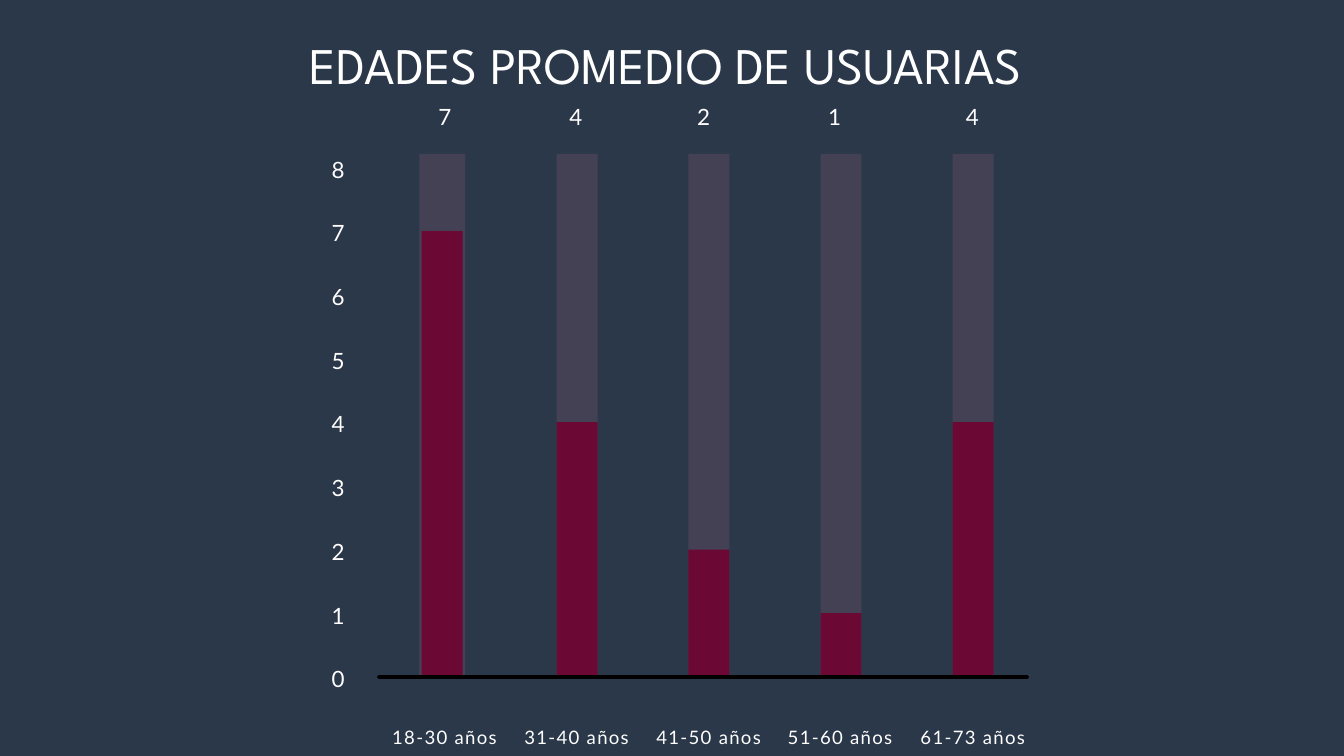
from pptx import Presentation
from pptx.dml.color import RGBColor
from pptx.enum.shapes import MSO_SHAPE
from pptx.enum.text import PP_ALIGN
from pptx.oxml.ns import qn
from pptx.util import Pt
from lxml import etree

RECTANGLE = MSO_SHAPE.RECTANGLE
CENTER = PP_ALIGN.CENTER

COLORS = {
    "background": "2B3849",
    "title": "FFFFFF",
    "label": "FFFEFE",
    "track": "9C617B",
    "bar": "6B0834",
    "axis": "191919",
    "axis_line": "000000",
}

# Age group, users, centre of the bar, centre of the count, width of the track
AGE_GROUPS = [
    ("18-30 años", 7, 473.8, 476.6, 49),
    ("31-40 años", 4, 618.4, 617, 43.9),
    ("41-50 años", 2, 759.6, 753.8, 43.9),
    ("51-60 años ", 1, 901.1, 894.2, 43.9),
    ("61-73 años", 4, 1042.6, 1041.8, 43.9),
]
MAX_VALUE = 8
UNIT = 68.25
ZERO_Y = 725.3
TRACK_TOP = 164.9
BAR_BOTTOM = 726.5
BAR_WIDTH = 43.9
GROUP_PITCH = 141.5


def color(name):
    return RGBColor.from_string(COLORS[name])


def add_text(slide, text, center_x, top, width, height, size, line_spacing,
             font="Lato", color_name="label", tracking=0):
    """Add a centred line of text; tracking is in points."""
    box = slide.shapes.add_textbox(
        Pt(center_x - width / 2), Pt(top), Pt(width), Pt(height))
    frame = box.text_frame
    frame.word_wrap = True
    frame.margin_left = frame.margin_right = 0
    frame.margin_top = frame.margin_bottom = 0
    paragraph = frame.paragraphs[0]
    paragraph.text = text
    paragraph.alignment = CENTER
    paragraph.line_spacing = Pt(line_spacing)
    paragraph.font.name = font
    paragraph.font.size = Pt(size)
    paragraph.font.color.rgb = color(color_name)
    if tracking:
        properties = paragraph._p.pPr.find(qn("a:defRPr"))
        properties.set("spc", str(round(tracking * 100)))


def add_number(slide, value, center_x, top):
    add_text(slide, str(value), center_x, top, 46.1, 33.8, 24, 36.8,
             tracking=0.2)


def add_rectangle(slide, left, top, width, height, color_name, opacity=100):
    shape = slide.shapes.add_shape(
        RECTANGLE, Pt(left), Pt(top), Pt(width), Pt(height))
    shape.shadow.inherit = False
    shape.fill.solid()
    shape.fill.fore_color.rgb = color(color_name)
    shape.line.fill.background()
    if opacity < 100:
        fill_color = shape._element.spPr.find(qn("a:solidFill"))[0]
        etree.SubElement(fill_color, qn("a:alpha"), val=str(opacity * 1000))
    return shape


def add_bar(slide, value, center_x, track_width):
    """Add a pale full-height track with the value's bar over it."""
    add_rectangle(slide, center_x - track_width / 2, TRACK_TOP, track_width,
                  BAR_BOTTOM - TRACK_TOP, "track", opacity=23)
    top = ZERO_Y - value * UNIT
    add_rectangle(slide, center_x - BAR_WIDTH / 2, top, BAR_WIDTH,
                  BAR_BOTTOM - top, "bar")


def add_axis(slide):
    for value in range(MAX_VALUE + 1):
        add_number(slide, value, 362.2, 704.9 - value * UNIT)
    baseline = add_rectangle(slide, 406.1, 725, 694.8, 0.7, "axis")
    baseline.line.color.rgb = color("axis_line")
    baseline.line.width = Pt(3.75)


def main():
    presentation = Presentation()
    presentation.slide_width = Pt(1440)
    presentation.slide_height = Pt(810)
    slide = presentation.slides.add_slide(presentation.slide_layouts[6])
    slide.background.fill.solid()
    slide.background.fill.fore_color.rgb = color("background")

    add_text(slide, "EDADES PROMEDIO DE USUARIAS ", 720, 24.5, 1081.4, 72.7,
             55, 77, font="League Spartan", color_name="title")
    for index, group in enumerate(AGE_GROUPS):
        name, users, bar_x, count_x, track_width = group
        add_bar(slide, users, bar_x, track_width)
        add_number(slide, users, count_x, 102.2)
        add_text(slide, name, 476.3 + index * GROUP_PITCH, 768.2, 117.4, 31.7,
                 19.9, 33.3, tracking=1.4)
    add_axis(slide)

    presentation.save("out.pptx")


if __name__ == "__main__":
    main()
